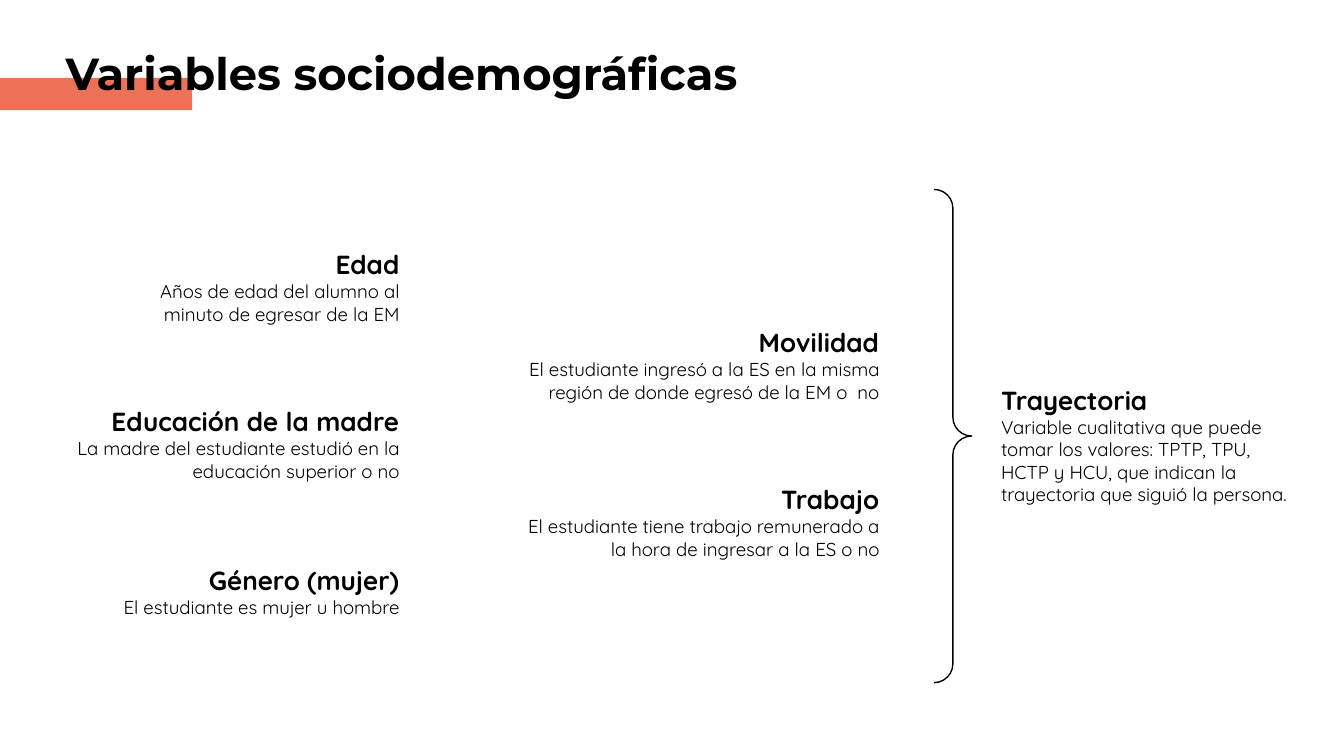
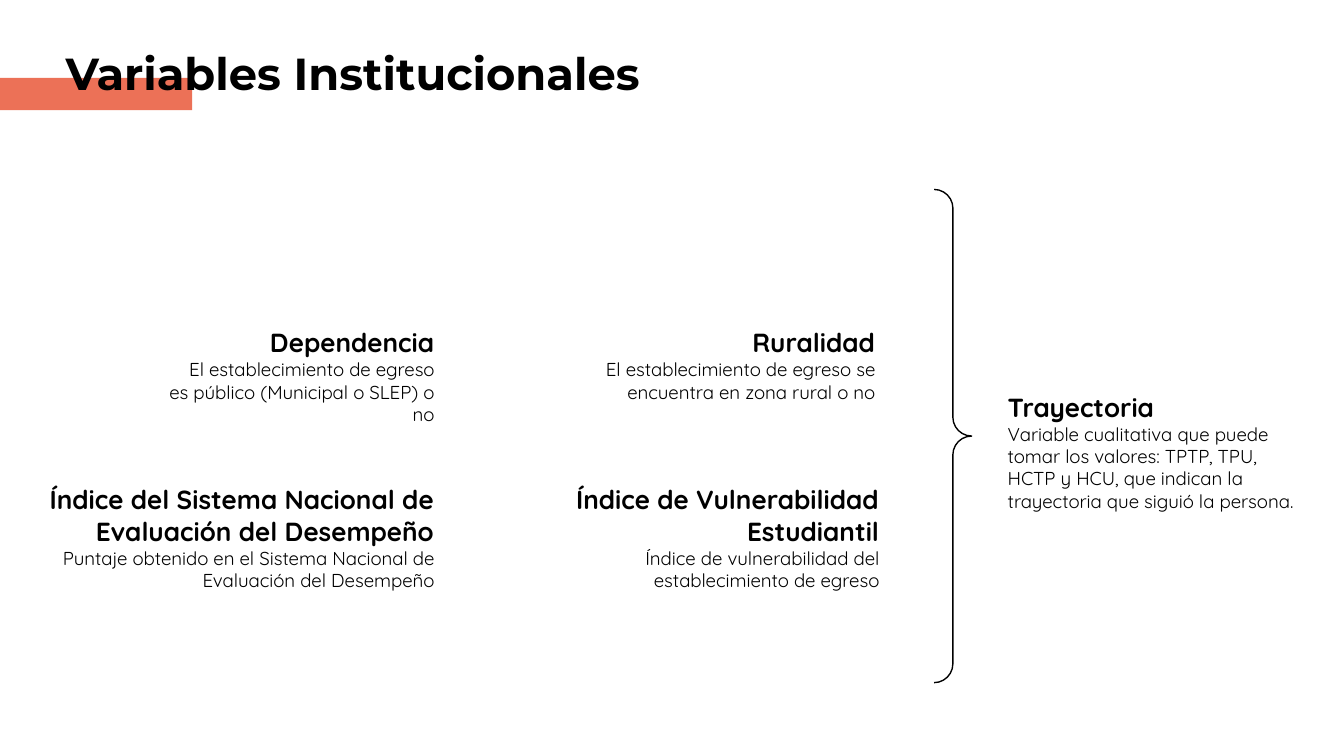
import pptx
import pptx.dml.color
import pptx.enum.shapes
import pptx.enum.text
import pptx.util

Inches = pptx.util.Inches
Shape = pptx.enum.shapes.MSO_SHAPE
Align = pptx.enum.text.PP_ALIGN
BLACK, CORAL, WHITE = "000000", "EC7157", "FFFFFF"
HEAD, BODY = "Montserrat", "Quicksand"

GOAL = ("Trayectoria", "Variable cualitativa que puede tomar los valores: TPTP, TPU, "
        "HCTP y HCU, que indican la trayectoria que siguió la persona.")

# Each variable: right edge, top, width, name, meaning
slides = [
    ("Variables sociodemográficas", (7.35, 2.76), [
        (3.07, 1.75, 2.19, "Edad", "Años de edad del alumno al minuto de egresar de la EM"),
        (3.07, 2.92, 2.84, "Educación de la madre",
         "La madre del estudiante estudió en la educación superior o no"),
        (3.07, 4.1, 2.43, "Género (mujer)", "El estudiante es mujer u hombre"),
        (6.64, 2.33, 2.91, "Movilidad",
         "El estudiante ingresó a la ES en la misma región de donde egresó de la EM o  no"),
        (6.64, 3.5, 2.84, "Trabajo",
         "El estudiante tiene trabajo remunerado a la hora de ingresar a la ES o no"),
    ]),
    ("Variables Institucionales", (7.4, 2.81), [
        (3.33, 2.33, 2.19, "Dependencia",
         "El establecimiento de egreso es público (Municipal o SLEP) o no"),
        (6.61, 2.33, 2.84, "Ruralidad",
         "El establecimiento de egreso se encuentra en zona rural o no"),
        (3.33, 3.5, 3.13, "Índice del Sistema Nacional de Evaluación del Desempeño",
         "Puntaje obtenido en el Sistema Nacional de Evaluación del Desempeño"),
        (6.64, 3.5, 2.84, "Índice de Vulnerabilidad Estudiantil",
         "Índice de vulnerabilidad del establecimiento de egreso"),
    ]),
]


def color(value):
    return pptx.dml.color.RGBColor.from_string(value)


def write(slide, place, lines, font, sizes, align=Align.LEFT):
    """Add a text box whose first line is bold."""
    frame = slide.shapes.add_textbox(*map(Inches, place)).text_frame
    frame.word_wrap = True
    frame.margin_left = frame.margin_right = Inches(0.1)
    frame.margin_top = frame.margin_bottom = Inches(0.1)
    frame.text = "\n".join(lines)
    for i, (para, size) in enumerate(zip(frame.paragraphs, sizes)):
        para.alignment = align
        for run in para.runs:
            run.font.name = font
            run.font.size = pptx.util.Pt(size)
            run.font.bold = i == 0
            run.font.color.rgb = color(BLACK)


deck = pptx.Presentation()
deck.slide_width = Inches(10)
deck.slide_height = Inches(10) * 9 // 16

for title, goal, items in slides:
    slide = deck.slides.add_slide(deck.slide_layouts[6])
    slide.background.fill.solid()
    slide.background.fill.fore_color.rgb = color(WHITE)

    band = slide.shapes.add_shape(
        Shape.RECTANGLE, *map(Inches, (0, 0.58, 1.43, 0.24)))
    band.shadow.inherit = False
    band.fill.solid()
    band.fill.fore_color.rgb = color(CORAL)
    band.line.fill.background()
    write(slide, (0.39, 0.24, 5.66, 0.7), [title], HEAD, [24])

    brace = slide.shapes.add_shape(
        Shape.RIGHT_BRACE, *map(Inches, (6.95, 1.41, 0.28, 3.67)))
    brace.shadow.inherit = False
    brace.adjustments[0] = brace.adjustments[1] = 0.5
    brace.fill.background()
    brace.line.color.rgb = color(BLACK)
    brace.line.width = pptx.util.Pt(0.75)

    for right, top, width, name, text in items:
        place = (right - width, top, width, 0.76)
        write(slide, place, [name, text], BODY, [14, 10], Align.RIGHT)
    write(slide, (*goal, 2.33, 1.17), GOAL, BODY, [14, 10])

deck.save("out.pptx")
